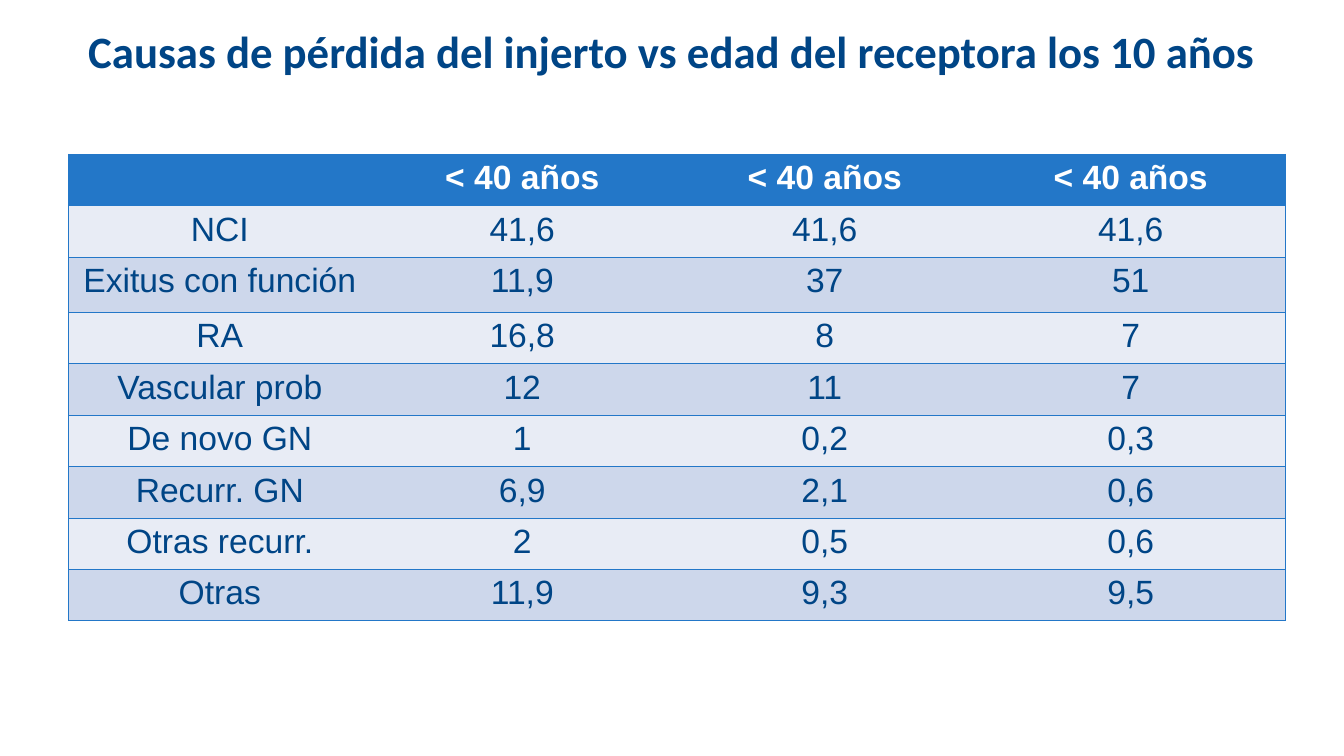
from dataclasses import dataclass

from lxml import etree
from pptx import Presentation
from pptx.dml.color import RGBColor
from pptx.enum.text import MSO_ANCHOR, PP_ALIGN
from pptx.oxml.ns import qn
from pptx.util import Inches, Pt

CENTER = PP_ALIGN.CENTER
MIDDLE = MSO_ANCHOR.MIDDLE
TOP = MSO_ANCHOR.TOP


@dataclass(frozen=True)
class Theme:
    title_font: str = "Calibri"
    table_font: str = "Arial"
    title_size: int = 32
    table_size: int = 24
    border_width: float = 0.75
    ink: str = "004586"
    header_ink: str = "FFFFFF"
    accent: str = "2377C8"
    bands: tuple = ("E8ECF5", "CDD7EB")


THEME = Theme()
SLIDE_WIDTH, SLIDE_HEIGHT = Inches(13.33), Inches(7.5)

# Table grid, in inches
TABLE_LEFT, TABLE_TOP = 0.68, 1.53
COLUMN_WIDTHS = (3, 3, 3, 3.07)
ROW_HEIGHT, TALL_ROW_HEIGHT, TALL_ROW = 0.51, 0.55, 2

TITLE = "Causas de pérdida del injerto vs edad del receptora los 10 años"
ROWS = (
    ("", "< 40 años", "< 40 años", "< 40 años"),
    ("NCI", "41,6", "41,6", "41,6"),
    ("Exitus con función", "11,9", "37", "51"),
    ("RA", "16,8", "8", "7"),
    ("Vascular prob", "12", "11", "7"),
    ("De novo GN", "1", "0,2", "0,3"),
    ("Recurr. GN", "6,9", "2,1", "0,6"),
    ("Otras recurr.", "2", "0,5", "0,6"),
    ("Otras", "11,9", "9,3", "9,5"),
)


def write_text(text_frame, text, font_name, size, color, bold):
    paragraph = text_frame.paragraphs[0]
    paragraph.alignment = CENTER
    if not text:
        paragraph.font.size = Pt(size)
        return
    run = paragraph.add_run()
    run.text = text
    run.font.name = font_name
    run.font.size = Pt(size)
    run.font.bold = bold
    run.font.color.rgb = RGBColor.from_string(color)


def add_title(slide):
    title = slide.shapes.title
    title.left, title.top = int(SLIDE_WIDTH * 0.05), Inches(0.17)
    title.width, title.height = int(SLIDE_WIDTH * 0.9), Inches(0.66)
    title.text_frame.word_wrap = True
    title.text_frame.vertical_anchor = MIDDLE
    write_text(title.text_frame, TITLE, THEME.title_font, THEME.title_size,
               THEME.ink, True)


def set_borders(cell, visible_sides):
    """Draw the named sides and hide the others; lines precede the fill."""
    properties = cell._tc.get_or_add_tcPr()
    for position, side in enumerate("LRTB"):
        line = etree.Element(qn(f"a:ln{side}"), w=str(Pt(THEME.border_width)))
        if side in visible_sides:
            fill = etree.SubElement(line, qn("a:solidFill"))
            etree.SubElement(fill, qn("a:srgbClr"), val=THEME.accent)
        else:
            etree.SubElement(line, qn("a:noFill"))
        properties.insert(position, line)


def format_cell(cell, text, row, column):
    is_header = row == 0
    fill_color = THEME.accent if is_header else THEME.bands[(row - 1) % 2]
    cell.fill.solid()
    cell.fill.fore_color.rgb = RGBColor.from_string(fill_color)
    cell.vertical_anchor = TOP
    write_text(cell.text_frame, text, THEME.table_font, THEME.table_size,
               THEME.header_ink if is_header else THEME.ink, is_header)
    # Horizontal rules everywhere, vertical rules on the outer edges only
    sides = "TB"
    if column == 0:
        sides += "L"
    if column == len(COLUMN_WIDTHS) - 1:
        sides += "R"
    set_borders(cell, sides)


def add_causes_table(slide):
    heights = [TALL_ROW_HEIGHT if row == TALL_ROW else ROW_HEIGHT
               for row in range(len(ROWS))]
    table = slide.shapes.add_table(
        len(ROWS), len(COLUMN_WIDTHS), Inches(TABLE_LEFT), Inches(TABLE_TOP),
        Inches(sum(COLUMN_WIDTHS)), Inches(sum(heights))).table
    for column, width in zip(table.columns, COLUMN_WIDTHS):
        column.width = Inches(width)
    for row, height in zip(table.rows, heights):
        row.height = Inches(height)
    for row, values in enumerate(ROWS):
        for column, text in enumerate(values):
            format_cell(table.cell(row, column), text, row, column)


def main():
    presentation = Presentation()
    presentation.slide_width = SLIDE_WIDTH
    presentation.slide_height = SLIDE_HEIGHT
    # Title-only layout
    slide = presentation.slides.add_slide(presentation.slide_layouts[5])
    add_title(slide)
    add_causes_table(slide)
    presentation.save("out.pptx")


if __name__ == "__main__":
    main()
